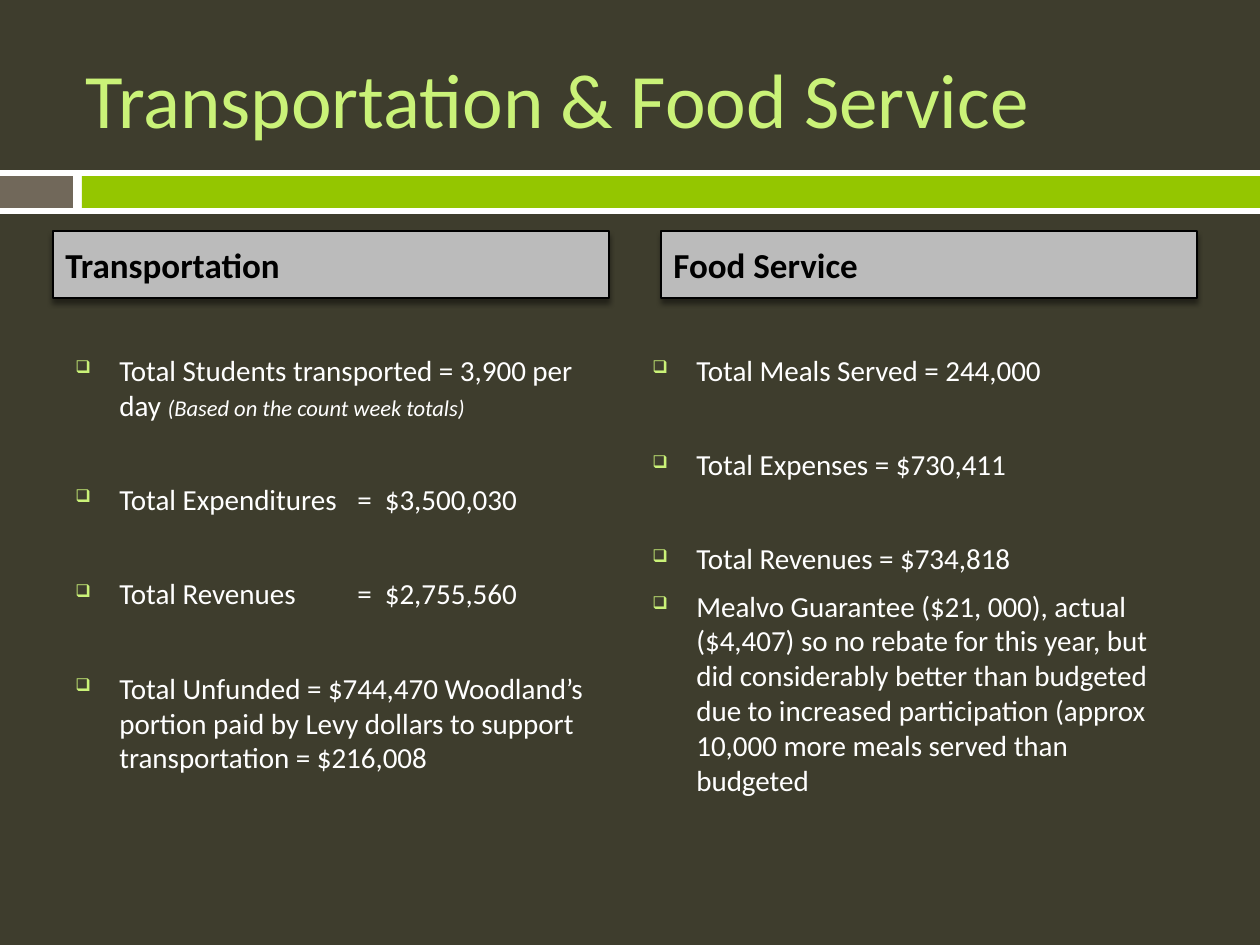
from dataclasses import dataclass

from lxml import etree
from pptx import Presentation
from pptx import util as u
from pptx.dml.color import RGBColor
from pptx.enum import shapes, text
from pptx.oxml.ns import qn


@dataclass(frozen=True)
class Theme:
    font: str = "Calibri"
    background: str = "3E3D2D"
    white: str = "FFFFFF"
    black: str = "000000"
    taupe: str = "71685A"
    green: str = "94C600"
    lime: str = "CAF278"
    header: str = "BBBBBB"
    title_size: float = 44
    header_size: float = 20
    body_size: float = 16.6
    note_size: float = 12.9
    close_gap: float = 7
    wide_gap: float = 34


THEME = Theme()
PX = u.Inches(1) // 126

# Content: (text, small note, space before)
TITLE = "Transportation & Food Service"
BANDS = [  # left, top, width, height, colour
    (0, 170, 1260, 44, THEME.white),
    (0, 176, 73, 32, THEME.taupe),
    (82, 176, 1178, 32, THEME.green),
]
COLUMNS = [
    {
        "header": "Transportation", "header_left": 53, "header_width": 556,
        "list_left": 63,
        "items": [
            ("Total Students transported = 3,900 per day ",
             "(Based on the count week totals)", 0),
            ("Total Expenditures\t=  $3,500,030", "", THEME.wide_gap),
            ("Total Revenues\t=  $2,755,560", "", THEME.wide_gap),
            ("Total Unfunded = $744,470 Woodland’s portion paid by Levy "
             "dollars to support transportation = $216,008", "", THEME.wide_gap),
        ],
    },
    {
        "header": "Food Service", "header_left": 661, "header_width": 536,
        "list_left": 640,
        "items": [
            ("Total Meals Served = 244,000", "", 0),
            ("Total Expenses = $730,411", "", THEME.wide_gap),
            ("Total Revenues = $734,818", "", THEME.wide_gap),
            ("Mealvo Guarantee ($21, 000), actual ($4,407) so no rebate for "
             "this year, but did considerably better than budgeted due to "
             "increased participation (approx 10,000 more meals served than "
             "budgeted", "", THEME.close_gap),
        ],
    },
]
HEADER_TOP, HEADER_HEIGHT = 231, 67
LIST_TOP, LIST_WIDTH, LIST_HEIGHT = 346, 557, 406
INDENT, TAB_STOP = 44, 282


def rgb(value):
    return RGBColor.from_string(value)


def style(span, size, colour, bold=False, italic=False):
    span.font.name = THEME.font
    span.font.size = u.Pt(size)
    span.font.color.rgb = rgb(colour)
    span.font.bold = bold
    span.font.italic = italic


def add_rectangle(page, left, top, width, height, colour):
    box = page.shapes.add_shape(shapes.MSO_SHAPE.RECTANGLE,
                                *(n * PX for n in (left, top, width, height)))
    box.shadow.inherit = False
    box.fill.solid()
    box.fill.fore_color.rgb = rgb(colour)
    box.line.fill.background()
    return box


def add_text_box(page, left, top, width, height):
    box = page.shapes.add_textbox(*(n * PX for n in (left, top, width, height)))
    box.text_frame.word_wrap = True
    return box


def add_shadow(box):
    effects = box._element.spPr.find(qn("a:effectLst"))
    shadow = etree.SubElement(effects, qn("a:outerShdw"), blurRad=str(u.Pt(3)),
                              dist=str(u.Pt(2.4)), dir="5400000", rotWithShape="0")
    colour = etree.SubElement(shadow, qn("a:srgbClr"), val=THEME.black)
    etree.SubElement(colour, qn("a:alpha"), val="45000")


def add_bullet(para, has_tab):
    props = para._p.get_or_add_pPr()
    props.set("marL", str(INDENT * PX))
    props.set("indent", str(-INDENT * PX))
    colour = etree.SubElement(props, qn("a:buClr"))
    etree.SubElement(colour, qn("a:srgbClr"), val=THEME.lime)
    etree.SubElement(props, qn("a:buSzPct"), val="60000")
    etree.SubElement(props, qn("a:buChar"), char="❑")
    if has_tab:
        tabs = etree.SubElement(props, qn("a:tabLst"))
        etree.SubElement(tabs, qn("a:tab"), pos=str(TAB_STOP * PX), algn="l")


def add_header(page, column):
    box = add_rectangle(page, column["header_left"], HEADER_TOP,
                        column["header_width"], HEADER_HEIGHT, THEME.header)
    box.line.color.rgb = rgb(THEME.black)
    box.line.width = u.Pt(0.79)
    add_shadow(box)
    frame = box.text_frame
    frame.text = column["header"]
    frame.vertical_anchor = text.MSO_ANCHOR.MIDDLE
    para = frame.paragraphs[0]
    para.alignment = text.PP_ALIGN.LEFT
    style(para.runs[0], THEME.header_size, THEME.black, bold=True)


def add_list(page, column):
    frame = add_text_box(page, column["list_left"], LIST_TOP,
                         LIST_WIDTH, LIST_HEIGHT).text_frame
    for index, (words, note, gap) in enumerate(column["items"]):
        para = frame.add_paragraph() if index else frame.paragraphs[0]
        para.text = words
        para.space_before = u.Pt(gap)
        style(para.runs[0], THEME.body_size, THEME.white)
        if note:
            span = para.add_run()
            span.text = note
            style(span, THEME.note_size, THEME.white, italic=True)
        add_bullet(para, "\t" in words)


def main():
    deck = Presentation()
    deck.slide_width, deck.slide_height = 1260 * PX, 945 * PX
    page = deck.slides.add_slide(deck.slide_layouts[6])
    page.background.fill.solid()
    page.background.fill.fore_color.rgb = rgb(THEME.background)

    # Divider bands
    for band in BANDS:
        add_rectangle(page, *band)

    # Title
    frame = add_text_box(page, 73, 38, 1124, 120).text_frame
    frame.text = TITLE
    frame.vertical_anchor = text.MSO_ANCHOR.MIDDLE
    style(frame.paragraphs[0].runs[0], THEME.title_size, THEME.lime)

    # Two columns
    for column in COLUMNS:
        add_list(page, column)
        add_header(page, column)

    deck.save("out.pptx")


if __name__ == "__main__":
    main()
